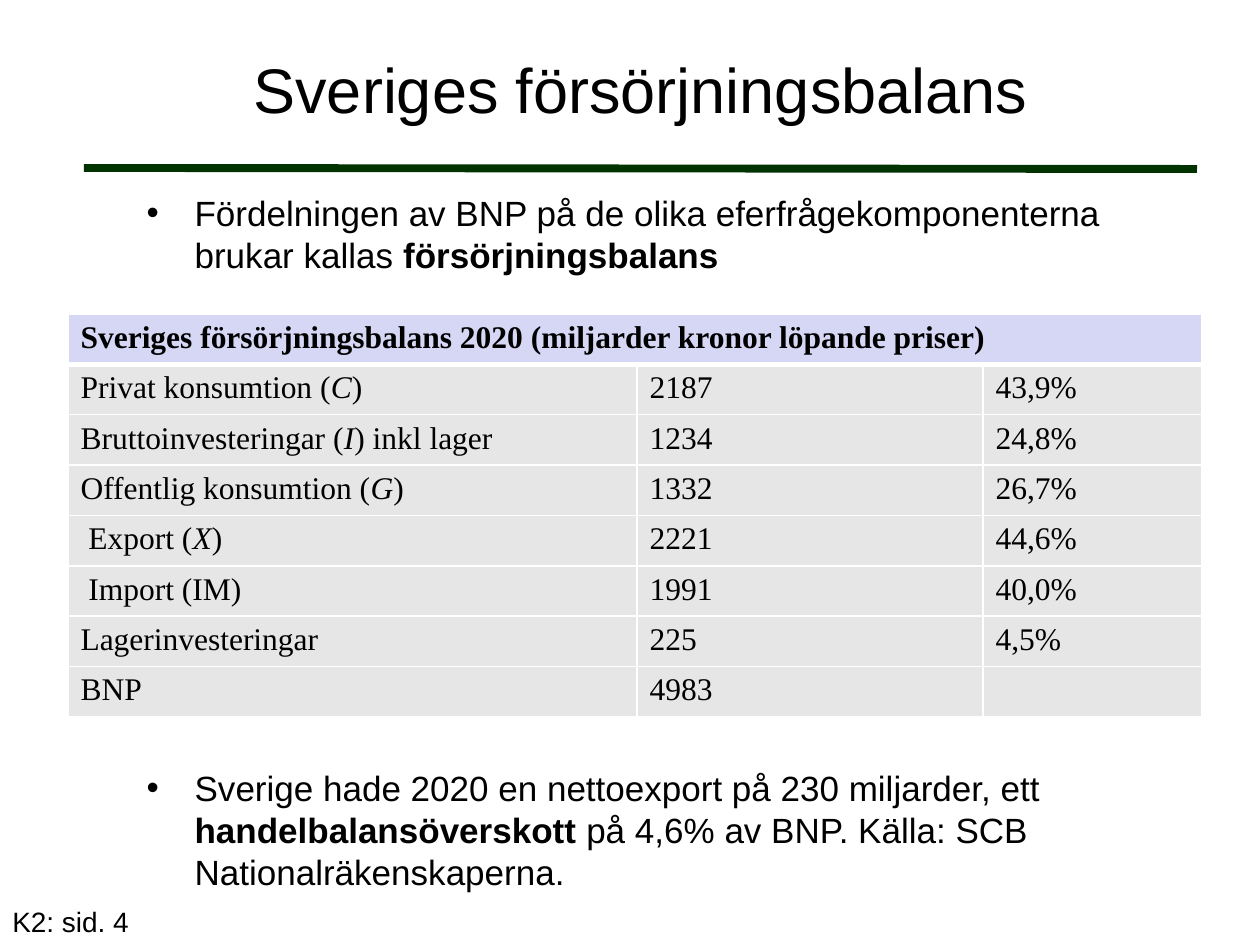
from lxml.etree import SubElement
from pptx import Presentation
from pptx.dml.color import RGBColor
from pptx.enum.shapes import MSO_CONNECTOR
from pptx.enum.text import MSO_ANCHOR, MSO_AUTO_SIZE, PP_ALIGN
from pptx.oxml import parse_xml
from pptx.oxml.ns import nsdecls, qn
from pptx.util import Emu, Pt

PX = 914400 / 126
BLACK = RGBColor(0x00, 0x00, 0x00)
WHITE = RGBColor(0xFF, 0xFF, 0xFF)
GREEN = RGBColor(0x00, 0x33, 0x00)
HEADER_FILL = RGBColor(0xD6, 0xD6, 0xF5)
ROW_FILL = RGBColor(0xE6, 0xE6, 0xE6)


def px(*lengths):
    return [Emu(round(length * PX)) for length in lengths]


def add_run(paragraph, text, size=18, font="Arial", bold=False, italic=False):
    run = paragraph.add_run()
    run.text = text
    run.font.size = Pt(size)
    run.font.name = font
    run.font.bold = bold
    run.font.italic = italic
    run.font.color.rgb = BLACK


presentation = Presentation()
presentation.slide_width, presentation.slide_height = px(1260, 945)
slide = presentation.slides.add_slide(presentation.slide_layouts.get_by_name("Two Content"))
title, upper_list, lower_list = slide.placeholders

# Title and the rule below it
title.left, title.top, title.width, title.height = px(84, 10, 1113, 156)
title.text_frame.vertical_anchor = MSO_ANCHOR.MIDDLE
title_paragraph = title.text_frame.paragraphs[0]
title_paragraph.alignment = PP_ALIGN.CENTER
add_run(title_paragraph, "Sveriges försörjningsbalans", size=36)

rule = slide.shapes.add_connector(MSO_CONNECTOR.STRAIGHT, *px(84, 168, 1197, 169))
rule.line.color.rgb = GREEN
rule.line.width = Pt(4.5)
SubElement(rule._element.spPr, qn("a:effectLst"))

# Bullets above and below the table: (text, bold)
bullets = [
    (upper_list, 185, 97, [
        ("Fördelningen av BNP på de olika eferfrågekomponenterna brukar kallas ", False),
        ("försörjningsbalans", True),
    ]),
    (lower_list, 760, 140, [
        ("Sverige hade 2020 en nettoexport på 230 miljarder, ett ", False),
        ("handelbalansöverskott", True),
        (" på 4,6% av BNP. Källa: SCB Nationalräkenskaperna.", False),
    ]),
]
for placeholder, top, height, pieces in bullets:
    placeholder.left, placeholder.top, placeholder.width, placeholder.height = px(
        134, top, 1002, height)
    placeholder.text_frame.auto_size = MSO_AUTO_SIZE.NONE
    paragraph = placeholder.text_frame.paragraphs[0]
    paragraph.space_before = Pt(0)
    indent = px(48)[0]
    properties = paragraph._p.get_or_add_pPr()
    properties.set("marL", str(indent))
    properties.set("indent", str(-indent))
    SubElement(properties, qn("a:buChar")).set("char", "•")
    for text, bold in pieces:
        add_run(paragraph, text, size=20, bold=bold)

# Table: label pieces (every second one italic), amount, share
header = "Sveriges försörjningsbalans 2020 (miljarder kronor löpande priser)"
rows = [
    ([header], "", ""),
    (["Privat konsumtion (", "C", ")"], "2187", "43,9%"),
    (["Bruttoinvesteringar (", "I", ") inkl lager"], "1234", "24,8%"),
    (["Offentlig konsumtion (", "G", ")"], "1332", "26,7%"),
    ([" Export (", "X", ")"], "2221", "44,6%"),
    ([" Import (IM)"], "1991", "40,0%"),
    (["Lagerinvesteringar"], "225", "4,5%"),
    (["BNP"], "4983", ""),
]
table = slide.shapes.add_table(len(rows), 3, *px(68, 314, 1134, 403)).table
for column, width in zip(table.columns, px(569, 346, 219)):
    column.width = width
table.cell(0, 0).merge(table.cell(0, 2))

for row_index, (label, amount, share) in enumerate(rows):
    is_header = row_index == 0
    for column_index, pieces in enumerate([label, [amount], [share]]):
        cell = table.cell(row_index, column_index)
        cell.fill.solid()
        cell.fill.fore_color.rgb = HEADER_FILL if is_header else ROW_FILL
        border_widths = {"lnL": 1, "lnR": 1, "lnT": 3 if row_index == 1 else 1,
                         "lnB": 3 if is_header else 1}
        for position, (side, width) in enumerate(border_widths.items()):
            cell._tc.get_or_add_tcPr().insert(position, parse_xml(
                f'<a:{side} {nsdecls("a")} w="{Pt(width)}"><a:solidFill>'
                f'<a:srgbClr val="{WHITE}"/></a:solidFill></a:{side}>'))
        if cell.is_spanned:
            continue
        for piece_index, text in enumerate(pieces):
            add_run(cell.text_frame.paragraphs[0], text, font="Times New Roman",
                    bold=is_header, italic=piece_index % 2 == 1)

# Page reference
reference = slide.shapes.add_textbox(*px(0, 898, 262, 47))
reference.text_frame.word_wrap = True
add_run(reference.text_frame.paragraphs[0], "K2: sid. 4", size=16)

presentation.save("out.pptx")
